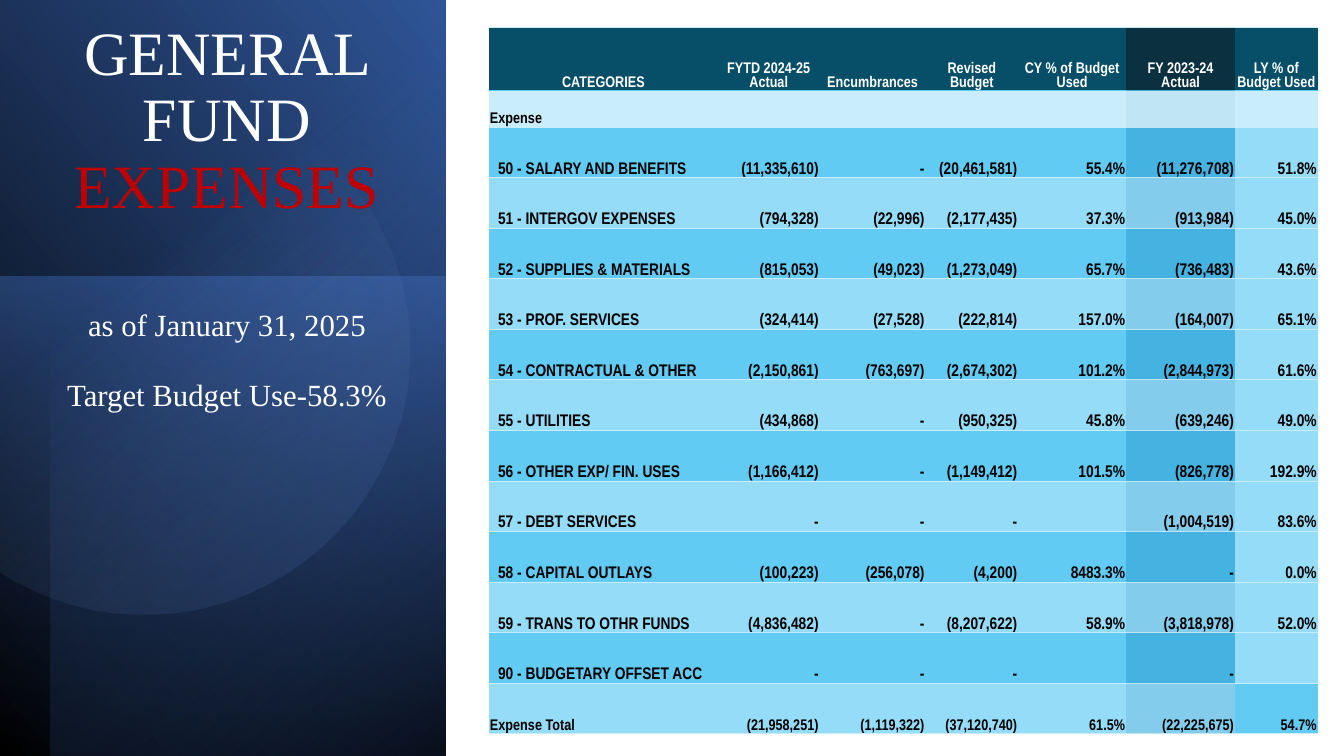
import math
from dataclasses import dataclass

from lxml import etree
from pptx import Presentation
from pptx import util as u
from pptx.dml.color import RGBColor
from pptx.enum import shapes, text
from pptx.oxml import ns


@dataclass(frozen=True)
class Theme:
    title_font: str = "Times New Roman"
    table_font: str = "Arial Narrow"
    title_size: int = 44
    subtitle_size: int = 22
    label_size: int = 11
    body_size: int = 12
    white: str = "FFFFFF"
    black: str = "000000"
    red: str = "C00000"
    blue: str = "4472C4"
    deep_blue: str = "2F5597"
    navy: str = "203864"
    soft_blue: str = "8FAADC"
    header: tuple = ("074F69", "0B3040")
    section: tuple = ("CAEDFB", "C0E6F5")
    dark_band: tuple = ("61CBF3", "44B3E1")
    light_band: tuple = ("94DCF8", "83CCEB")


THEME = Theme()
GRID_COLUMNS, GRID_ROWS = 13.33, 7.5
CELL = u.Inches(1)
PANEL_WIDTH = 4.42
PRIOR_YEAR, LAST_COLUMN = 5, 6
COLUMN_WIDTHS = (2.27, 1.01, 1.05, 0.92, 1.07, 1.08, 0.82)
HEADER_HEIGHT, SECTION_HEIGHT, TABLE_HEIGHT = 0.63, 0.36, 7.01
NO_STYLE = "{2D5ABB26-0587-4C30-8999-92F81FD0307C}"

EXPENSES = (
    ("CATEGORIES", "FYTD 2024-25 Actual", "Encumbrances", "Revised Budget",
     "CY % of Budget Used", "FY 2023-24 Actual", "LY % of Budget Used"),
    ("Expense", "", "", "", "", "", ""),
    ("50 - SALARY AND BENEFITS", "(11,335,610)", "-", "(20,461,581)", "55.4%", "(11,276,708)", "51.8%"),
    ("51 - INTERGOV EXPENSES", "(794,328)", "(22,996)", "(2,177,435)", "37.3%", "(913,984)", "45.0%"),
    ("52 - SUPPLIES & MATERIALS", "(815,053)", "(49,023)", "(1,273,049)", "65.7%", "(736,483)", "43.6%"),
    ("53 - PROF. SERVICES", "(324,414)", "(27,528)", "(222,814)", "157.0%", "(164,007)", "65.1%"),
    ("54 - CONTRACTUAL & OTHER", "(2,150,861)", "(763,697)", "(2,674,302)", "101.2%", "(2,844,973)", "61.6%"),
    ("55 - UTILITIES", "(434,868)", "-", "(950,325)", "45.8%", "(639,246)", "49.0%"),
    ("56 - OTHER EXP/ FIN. USES", "(1,166,412)", "-", "(1,149,412)", "101.5%", "(826,778)", "192.9%"),
    ("57 - DEBT SERVICES", "-", "-", "-", "", "(1,004,519)", "83.6%"),
    ("58 - CAPITAL OUTLAYS", "(100,223)", "(256,078)", "(4,200)", "8483.3%", "-", "0.0%"),
    ("59 - TRANS TO OTHR FUNDS", "(4,836,482)", "-", "(8,207,622)", "58.9%", "(3,818,978)", "52.0%"),
    ("90 - BUDGETARY OFFSET ACC", "-", "-", "-", "", "-", ""),
    ("Expense Total", "(21,958,251)", "(1,119,322)", "(37,120,740)", "61.5%", "(22,225,675)", "54.7%"),
)


def grid(*lengths):
    return [round(length * CELL) for length in lengths]


def add_child(parent, tag, **attributes):
    child = etree.SubElement(parent, ns.qn(tag))
    for name, value in attributes.items():
        child.set(name, str(value))
    return child


def fill_gradient(shape, angle, stops):
    shape.shadow.inherit = False
    shape.line.fill.background()
    shape.fill.gradient()
    gradient = shape._element.spPr.find(ns.qn("a:gradFill"))
    for child in list(gradient):
        gradient.remove(child)
    gradient.set("rotWithShape", "1")
    stop_list = add_child(gradient, "a:gsLst")
    for position, color, opacity in stops:
        stop = add_child(stop_list, "a:gs", pos=position * 1000)
        paint = add_child(stop, "a:srgbClr", val=color)
        if opacity < 100:
            add_child(paint, "a:alpha", val=opacity * 1000)
    add_child(gradient, "a:lin", ang=angle * 60000, scaled=0)


def add_panel(slide, box, rotation, flipped, angle, stops):
    panel = slide.shapes.add_shape(shapes.MSO_SHAPE.RECTANGLE, *grid(*box))
    panel.rotation = rotation
    if flipped:
        panel._element.spPr.find(ns.qn("a:xfrm")).set("flipH", "1")
    fill_gradient(panel, angle, stops)


def add_cut_circle(slide):
    radius, center_x, center_y, rotation, half_arc = 2.63, 1.81, 3.94, 101.6, 123
    steps = 120
    points = []
    for step in range(steps + 1):
        angle = math.radians(half_arc * (2 * step / steps - 1) - rotation)
        points.append(grid(center_x + radius * math.cos(angle),
                           center_y + radius * math.sin(angle)))
    builder = slide.shapes.build_freeform(*points[0])
    builder.add_line_segments(points[1:], close=True)
    circle = builder.convert_to_shape()
    circle.rotation = rotation
    fill_gradient(circle, 310, ((39, THEME.soft_blue, 0), (100, THEME.deep_blue, 26)))


def set_font(font, name, size, color, bold=False):
    font.name, font.size, font.bold = name, u.Pt(size), bold
    font.color.rgb = RGBColor.from_string(color)


def format_title(slide):
    title = slide.shapes.title
    slide.shapes._spTree.append(title._element)
    title.left, title.top, title.width, title.height = grid(0.42, 0.17, 3.66, 5.01)
    frame = title.text_frame
    frame.word_wrap = True
    frame.auto_size = text.MSO_AUTO_SIZE.NONE
    frame.vertical_anchor = text.MSO_ANCHOR.TOP
    lines = (
        (0, THEME.title_size, (("GENERAL FUND ", THEME.white), ("EXPENSES", THEME.red))),
        (63, THEME.subtitle_size, (("as of January 31, 2025", THEME.white),)),
        (26, THEME.subtitle_size, (("Target Budget Use-58.3%", THEME.white),)),
    )
    for index, (space, size, parts) in enumerate(lines):
        paragraph = frame.add_paragraph() if index else frame.paragraphs[0]
        paragraph.alignment = text.PP_ALIGN.CENTER
        paragraph.line_spacing = 0.9
        paragraph.space_before = u.Pt(space)
        for words, color in parts:
            run = paragraph.add_run()
            run.text = words
            set_font(run.font, THEME.title_font, size, color)


def set_borders(cell, top, bottom):
    properties = cell._tc.get_or_add_tcPr()
    for tag, color in (("a:lnT", top), ("a:lnB", bottom)):
        line = add_child(properties, tag, w=u.Pt(0.5))
        add_child(add_child(line, "a:solidFill"), "a:srgbClr", val=color)


def row_colors(row):
    if row == 0:
        return THEME.header
    if row == 1:
        return THEME.section
    return THEME.light_band if row % 2 else THEME.dark_band


def format_cell(cell, row, column, words):
    last_row = len(EXPENSES) - 1
    prior = int(column == PRIOR_YEAR)
    color = row_colors(row)[prior]
    if column == LAST_COLUMN and row > 1:
        color = (THEME.dark_band if row == last_row else THEME.light_band)[0]
    edge, header_edge = THEME.section[prior], THEME.dark_band[prior]
    set_borders(cell, header_edge if row == 1 else edge, header_edge if row == 0 else edge)
    cell.fill.solid()
    cell.fill.fore_color.rgb = RGBColor.from_string(color)
    category = 1 < row < last_row
    cell.margin_left, cell.margin_top, cell.margin_right, cell.margin_bottom = grid(
        0.09 if category and column == 0 else 0.01, 0.01, 0.01, 0)
    cell.vertical_anchor = text.MSO_ANCHOR.BOTTOM
    paragraph = cell.text_frame.paragraphs[0]
    paragraph.text = words
    if row == 0:
        paragraph.alignment = text.PP_ALIGN.CENTER
    else:
        paragraph.alignment = text.PP_ALIGN.RIGHT if column else text.PP_ALIGN.LEFT
    set_font(paragraph.font, THEME.table_font,
             THEME.body_size if category else THEME.label_size,
             THEME.black if row else THEME.white, bold=True)


def add_expense_table(slide):
    frame = slide.shapes.add_table(len(EXPENSES), len(COLUMN_WIDTHS),
                                   *grid(4.85, 0.27, sum(COLUMN_WIDTHS), TABLE_HEIGHT))
    table = frame.table
    table.first_row = table.horz_banding = False
    table._tbl.tblPr.find(ns.qn("a:tableStyleId")).text = NO_STYLE
    for column, width in zip(table.columns, grid(*COLUMN_WIDTHS)):
        column.width = width
    body_rows = len(EXPENSES) - 2
    body_height = (TABLE_HEIGHT - HEADER_HEIGHT - SECTION_HEIGHT) / body_rows
    heights = grid(HEADER_HEIGHT, SECTION_HEIGHT, *[body_height] * body_rows)
    for row, (values, height) in enumerate(zip(EXPENSES, heights)):
        table.rows[row].height = height
        for column, words in enumerate(values):
            format_cell(table.cell(row, column), row, column, words)


def main():
    presentation = Presentation()
    presentation.slide_width, presentation.slide_height = grid(GRID_COLUMNS, GRID_ROWS)
    slide = presentation.slides.add_slide(presentation.slide_layouts[5])
    add_panel(slide, (-1.55, 1.55, 7.52, PANEL_WIDTH), 90, True, 310,
              ((0, THEME.black, 100), (100, THEME.deep_blue, 100)))
    add_panel(slide, (-0.17, 2.91, 4.76, PANEL_WIDTH), 270, False, 190,
              ((0, THEME.blue, 50), (100, THEME.navy, 0)))
    add_panel(slide, (-1.29, 1.79, GRID_ROWS, 3.92), 270, True, 220,
              ((0, THEME.black, 59), (69, THEME.blue, 0)))
    add_cut_circle(slide)
    format_title(slide)
    add_expense_table(slide)
    presentation.save("out.pptx")


if __name__ == "__main__":
    main()
